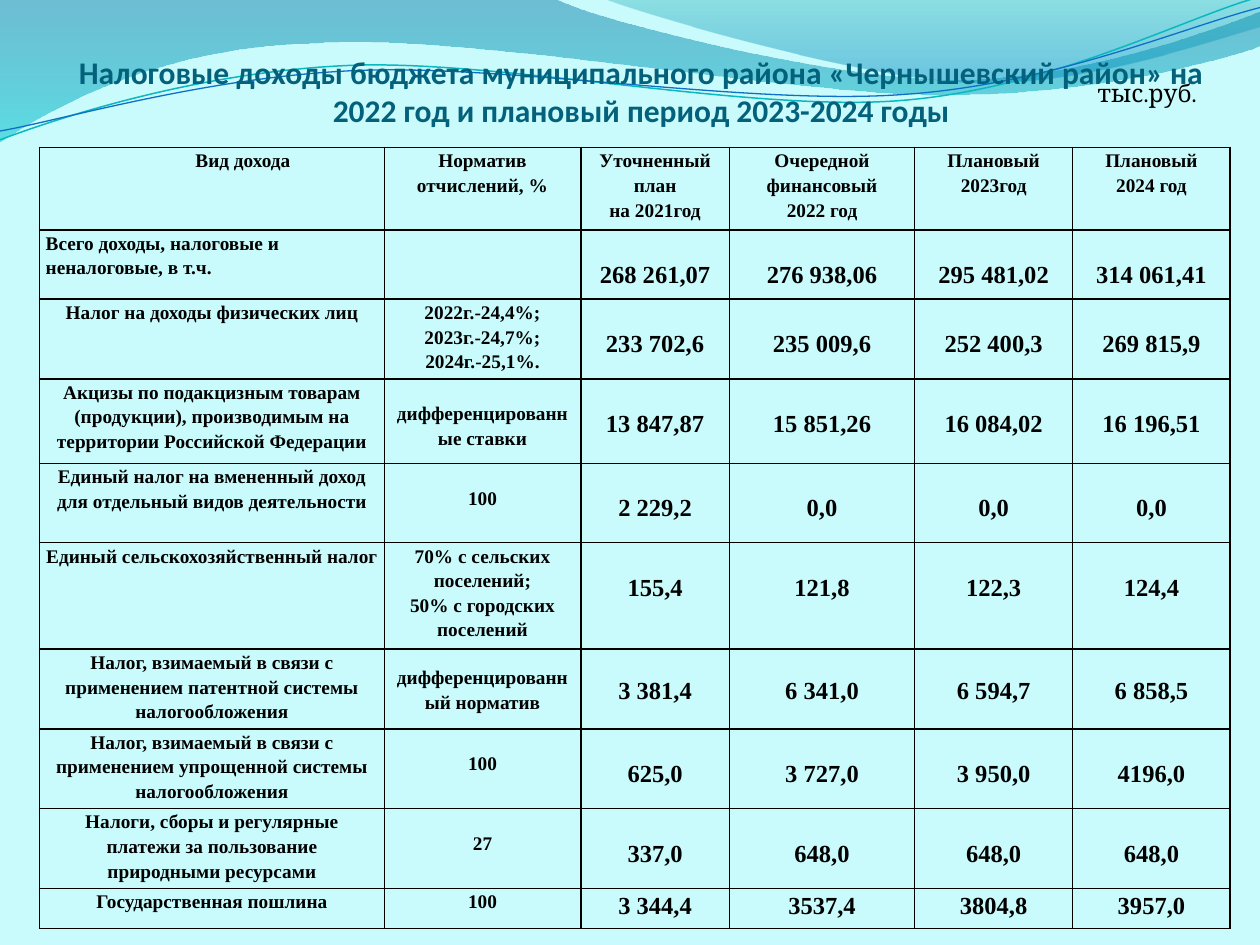
from lxml import etree
from pptx import Presentation
from pptx import util as u
from pptx.dml.color import RGBColor
from pptx.enum import text
from pptx.oxml import ns

CELL = u.Inches(0.1)
COLS, ROWS = 100, 75
SERIF = "Times New Roman"
BLACK = RGBColor(0x00, 0x00, 0x00)
PALE = RGBColor(0xC9, 0xFA, 0xFC)
TITLE = RGBColor(0x04, 0x61, 0x7B)
SEA = RGBColor(0x00, 0x74, 0xA1)
CYAN = RGBColor(0x00, 0xC6, 0xCF)
TEAL = RGBColor(0x00, 0xA1, 0xA9)
AZURE = RGBColor(0x00, 0x8B, 0xBF)
LINE_TEAL = RGBColor(0x0A, 0xB8, 0xBF)
LINE_BLUE = RGBColor(0x0F, 0x6F, 0xC6)

COL_WIDTHS = [27.35, 15.6, 11.8, 14.7, 12.55, 12.5]
ROW_HEIGHTS = [6.55, 5.5, 4.7, 6.7, 6.3, 6.3, 6.3, 6.3, 6.3, 3.2]
SIDE, BASE = 0.48, 0.01
LABEL_DROP, NUMBER_DROP = 1.7, 2.2
HEADER = ["Вид дохода", "Норматив отчислений, %", "Уточненный план\nна 2021год",
          "Очередной финансовый\n2022 год", "Плановый\n2023год", "Плановый\n2024 год"]
TAXES = [
    ("Всего доходы, налоговые и неналоговые, в т.ч.", "",
     "268 261,07", "276 938,06", "295 481,02", "314 061,41"),
    ("Налог на доходы физических лиц", "2022г.-24,4%;\n2023г.-24,7%;\n2024г.-25,1%.",
     "233 702,6", "235 009,6", "252 400,3", "269 815,9"),
    ("Акцизы по подакцизным товарам (продукции), производимым на территории "
     "Российской Федерации", "дифференцированные ставки",
     "13 847,87", "15 851,26", "16 084,02", "16 196,51"),
    ("Единый налог на вмененный доход для отдельный видов деятельности", "100",
     "2 229,2", "0,0", "0,0", "0,0"),
    ("Единый сельскохозяйственный налог",
     "70% с сельских поселений;\n50% с городских поселений",
     "155,4", "121,8", "122,3", "124,4"),
    ("Налог, взимаемый в связи с применением патентной системы налогообложения",
     "дифференцированный норматив", "3 381,4", "6 341,0", "6 594,7", "6 858,5"),
    ("Налог, взимаемый в связи с применением упрощенной системы налогообложения", "100",
     "625,0", "3 727,0", "3 950,0", "4196,0"),
    ("Налоги, сборы и регулярные платежи за пользование\nприродными ресурсами", "27",
     "337,0", "648,0", "648,0", "648,0"),
    ("Государственная пошлина", "100", "3 344,4", "3537,4", "3804,8", "3957,0"),
]
PATENT_ROW, DUTY_ROW = 6, 9
DROPPED_RATE_ROWS = {3, 4, 7, 8}


def grid(n):
    return u.Emu(round(n * CELL))


def add_outline(s, start, steps, close):
    fb = s.shapes.build_freeform(*map(grid, start))
    fb.add_line_segments([(grid(x), grid(y)) for step in steps for x, y in step], close=close)
    sp = fb.convert_to_shape()
    sp.shadow.inherit = False
    segments = iter(list(sp.element.spPr.iter(ns.qn("a:lnTo"))))
    for step in steps:
        parts = [next(segments) for _ in step]
        if len(parts) == 3:
            curve = etree.Element(ns.qn("a:cubicBezTo"))
            parts[0].addprevious(curve)
            for part in parts:
                curve.append(part[0])
                part.getparent().remove(part)
    return sp


def add_wave(s, start, steps, stops):
    sp = add_outline(s, start, steps, True)
    sp.line.fill.background()
    sp.fill.gradient()
    sp.fill.gradient_angle = 270
    for stop, (pos, color, _) in zip(sp.fill.gradient_stops, stops):
        stop.position = pos
        stop.color.rgb = color
    for clr, (_, _, opacity) in zip(sp.element.spPr.iter(ns.qn("a:srgbClr")), stops):
        etree.SubElement(clr, ns.qn("a:alpha"), val=str(opacity * 1000))


def add_curve(s, start, steps, color, width):
    sp = add_outline(s, start, steps, False)
    sp.fill.background()
    sp.line.color.rgb = color
    sp.line.width = u.Pt(width)


def write(tf, content, size, font, color, bold=False, align=text.PP_ALIGN.CENTER, spacing=None):
    for i, line in enumerate(content.split("\n")):
        p = tf.add_paragraph() if i else tf.paragraphs[0]
        p.alignment = align
        p.line_spacing = spacing
        r = p.add_run()
        r.text = line
        r.font.size, r.font.name, r.font.bold = u.Pt(size), font, bold
        r.font.color.rgb = color


def add_text(s, box, content, size, font, color, anchor, bold=False):
    tf = s.shapes.add_textbox(*map(grid, box)).text_frame
    tf.word_wrap = True
    tf.vertical_anchor = anchor
    if anchor == text.MSO_ANCHOR.BOTTOM:
        tf.margin_left = tf.margin_right = tf.margin_bottom = 0
    write(tf, content, size, font, color, bold)


def add_borders(cell):
    tcPr = cell._tc.get_or_add_tcPr()
    for i, side in enumerate(("lnL", "lnR", "lnT", "lnB")):
        ln = etree.Element(ns.qn("a:" + side), w=str(u.Pt(1)))
        fill = etree.SubElement(ln, ns.qn("a:solidFill"))
        etree.SubElement(fill, ns.qn("a:srgbClr"), val=str(BLACK))
        tcPr.insert(i, ln)


def top_drop(row, col):
    if col == 1:
        return LABEL_DROP if row in DROPPED_RATE_ROWS else 0
    return NUMBER_DROP if col > 1 and row not in (0, PATENT_ROW, DUTY_ROW) else 0


def fill_cell(cell, row, col, content):
    cell.fill.background()
    add_borders(cell)
    cell.margin_left = grid(5.4 if row == col == 0 else SIDE)
    cell.margin_right = grid(SIDE)
    cell.margin_top, cell.margin_bottom = grid(top_drop(row, col)), grid(BASE)
    if row == PATENT_ROW and col:
        cell.vertical_anchor = text.MSO_ANCHOR.MIDDLE
    if content:
        align = text.PP_ALIGN.LEFT if (row, col) == (1, 0) else text.PP_ALIGN.CENTER
        size = 14 if row and col > 1 else 11
        write(cell.text_frame, content, size, SERIF, BLACK, True, align, 1.15)


def add_tax_table(s, left, top):
    data = [HEADER, *TAXES]
    table = s.shapes.add_table(len(data), len(HEADER), grid(left), grid(top),
                               grid(sum(COL_WIDTHS)), grid(sum(ROW_HEIGHTS))).table
    table.first_row = table.horz_banding = False
    for column, width in zip(table.columns, COL_WIDTHS):
        column.width = grid(width)
    for row, height in zip(table.rows, ROW_HEIGHTS):
        row.height = grid(height)
    for i, values in enumerate(data):
        for j, content in enumerate(values):
            fill_cell(table.cell(i, j), i, j, content)


def add_waves(s):
    add_wave(s, (0, -0.1), [
        [(44, -0.1)],
        [(47.6, 1.7), (66.4, 6.3), (75.8, 6.3)],
        [(85.3, 6.3), (95.8, 2.6), (100, 0.9)],
        [(100.1, 3.6)],
        [(98.3, 4.4), (87, 7.6), (74.6, 7.5)],
        [(62.2, 7.5), (38.2, 2.8), (25.7, 3.4)],
        [(12.9, 3.6), (4.6, 8.3), (-0.1, 11.3)],
    ], [(0, SEA, 45), (1, CYAN, 55)])
    add_wave(s, (47.9, -0.1), [
        [(50.9, 1.1), (68.2, 6.2), (76.9, 6.5)],
        [(85.6, 6.9), (96.1, 3.2), (100, 2.1)],
        [(100, 0)],
    ], [(0, TEAL, 30), (0.8, AZURE, 45)])
    add_curve(s, (0, 11.1), [
        [(4.8, 9.3), (15.8, 5.7), (27.7, 5.2)],
        [(39.5, 4.7), (59.3, 8.9), (71.3, 8)],
        [(83.3, 7.1), (93.8, 1.5), (99.8, -0.2)],
    ], LINE_TEAL, 0.85)
    add_curve(s, (0, 10.4), [
        [(4.7, 9.6), (16.4, 6.1), (28.3, 5.6)],
        [(40.3, 5.1), (59.7, 8.4), (71.7, 7.5)],
        [(83.6, 6.7), (94.1, 2.1), (100, 0.6)],
    ], LINE_BLUE, 0.75)


def main():
    prs = Presentation()
    prs.slide_width, prs.slide_height = grid(COLS), grid(ROWS)
    s = prs.slides.add_slide(prs.slide_layouts[6])
    s.background.fill.solid()
    s.background.fill.fore_color.rgb = PALE
    add_waves(s)
    add_text(s, (5.5, 3.1, 90.8, 7.15),
             "Налоговые доходы бюджета муниципального района «Чернышевский район» на "
             "2022 год и плановый период 2023-2024 годы",
             18, "Calibri", TITLE, text.MSO_ANCHOR.BOTTOM, True)
    add_text(s, (84.4, 6.2, 13.3, 2.3), "тыс.руб.", 14, "Cambria", BLACK,
             text.MSO_ANCHOR.MIDDLE)
    add_tax_table(s, 3.15, 11.7)
    prs.save("out.pptx")


if __name__ == "__main__":
    main()
